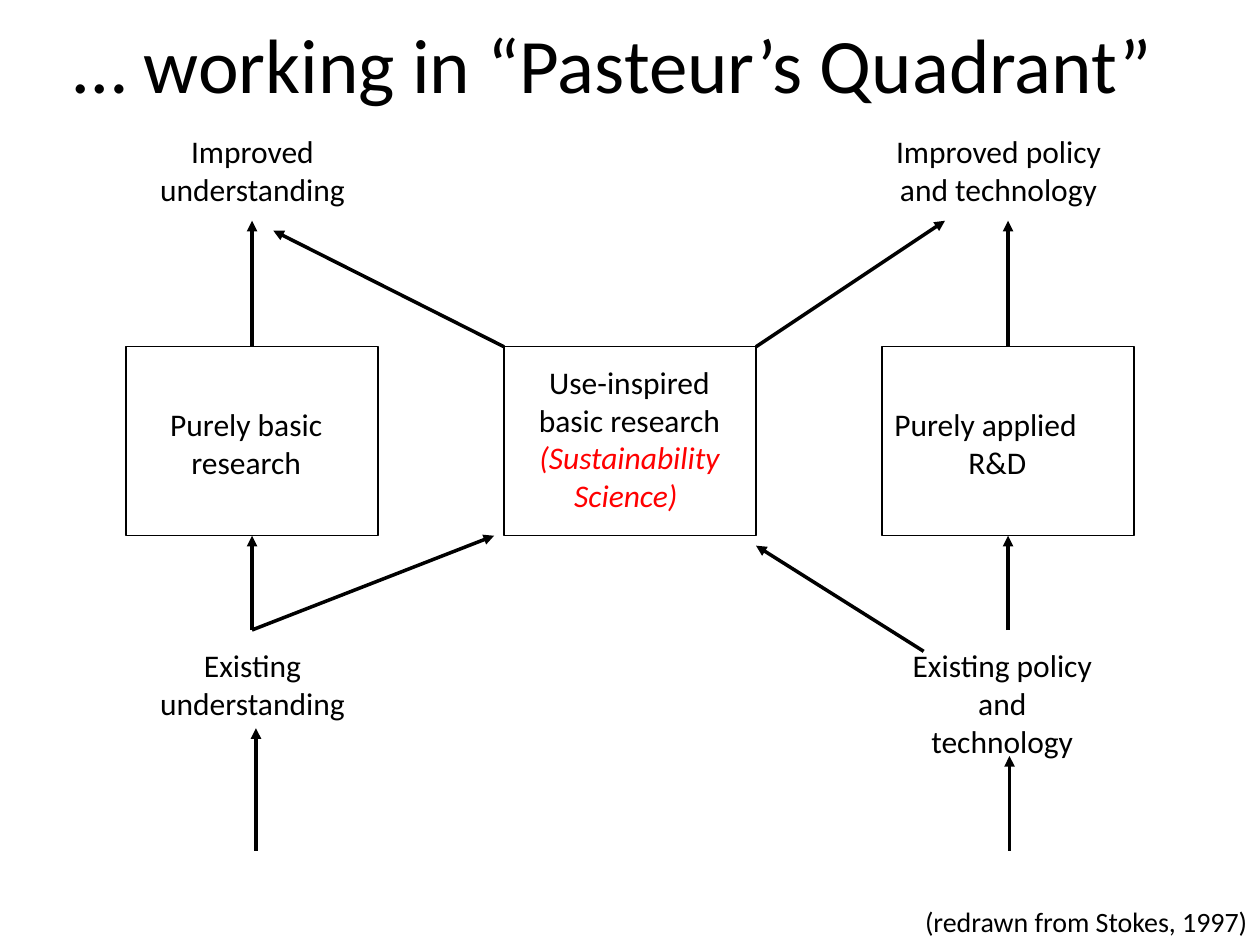
from dataclasses import dataclass
from typing import Optional

from lxml import etree
from pptx import Presentation
from pptx.dml.color import RGBColor
from pptx.enum.shapes import MSO_CONNECTOR, MSO_SHAPE
from pptx.enum.text import PP_ALIGN
from pptx.oxml.ns import qn
from pptx.util import Cm, Pt

LEFT, CENTER, RIGHT = PP_ALIGN.LEFT, PP_ALIGN.CENTER, PP_ALIGN.RIGHT
RECTANGLE, STRAIGHT = MSO_SHAPE.RECTANGLE, MSO_CONNECTOR.STRAIGHT
TOP_SITE, BOTTOM_SITE = 0, 2
BLANK_LAYOUT = 6
BLACK, RED = "000000", "FF0000"

BOX_WIDTH, BOX_HEIGHT, BOX_TOP = 5.08, 3.81, 6.99
BOX_BOTTOM = BOX_TOP + BOX_HEIGHT
BOX_LEFTS = {"basic": 2.54, "inspired": 10.16, "applied": 17.78}
BASIC_AXIS = BOX_LEFTS["basic"] + BOX_WIDTH / 2
APPLIED_AXIS = BOX_LEFTS["applied"] + BOX_WIDTH / 2
OUTCOME_Y, SOURCE_Y = 4.45, 12.7


@dataclass
class Line:
    text: str
    alignment: PP_ALIGN = CENTER
    color: str = BLACK
    italic: Optional[bool] = None


@dataclass
class Label:
    left: float
    top: float
    width: float
    height: float
    lines: list[Line]
    size: int = 18


@dataclass
class Arrow:
    start: tuple[float, float]
    end: tuple[float, float]
    from_box: Optional[str] = None
    to_box: Optional[str] = None


LABELS = [
    Label(0.2, 0.2, 24.33, 2.13, [Line("… working in “Pasteur’s Quadrant”")], 44),
    Label(2.74, 2.54, 4.7, 1.78, [Line("Improved understanding")]),
    Label(17.78, 2.54, 4.7, 1.78, [Line("Improved policy and technology")]),
    Label(2.74, 8.05, 4.45, 1.78, [Line("Purely basic research")]),
    Label(10.34, 7.19, 4.7, 3.33, [
        Line("Use-inspired basic research"),
        Line("(Sustainability Science) ", color=RED, italic=True),
    ]),
    Label(17.78, 8.05, 4.65, 1.78, [Line("Purely applied", LEFT), Line("R&D")]),
    Label(2.74, 12.9, 4.7, 1.78, [Line("Existing understanding")]),
    Label(17.98, 12.9, 4.45, 2.54, [Line("Existing policy and technology")]),
    Label(16.94, 18.11, 8.46, 0.94, [Line("(redrawn from Stokes, 1997)", RIGHT)], 16),
]

ARROWS = [
    Arrow((BASIC_AXIS, SOURCE_Y), (BASIC_AXIS, BOX_BOTTOM), to_box="basic"),
    Arrow((APPLIED_AXIS, SOURCE_Y), (APPLIED_AXIS, BOX_BOTTOM), to_box="applied"),
    Arrow((BASIC_AXIS, BOX_TOP), (BASIC_AXIS, OUTCOME_Y), from_box="basic"),
    Arrow((APPLIED_AXIS, BOX_TOP), (APPLIED_AXIS, OUTCOME_Y), from_box="applied"),
    Arrow((BASIC_AXIS, SOURCE_Y), (9.96, BOX_BOTTOM)),
    Arrow((BOX_LEFTS["inspired"] + BOX_WIDTH, BOX_TOP), (19.05, OUTCOME_Y)),
    Arrow((BOX_LEFTS["inspired"], BOX_TOP), (5.51, 4.65)),
    Arrow((18.62, 13.13), (15.24, 11)),
    Arrow((5.16, 17.15), (5.16, 14.68)),
    Arrow((20.35, 17.15), (20.35, 15.24)),
]


def hex_color(value: str) -> RGBColor:
    """Return the colour for a hex string."""
    return RGBColor.from_string(value)


def apply_format(target, values: dict) -> None:
    """Set each named attribute on the target."""
    for name, value in values.items():
        setattr(target, name, value)


def draw_box(slide, left: float):
    """Draw one outlined research box."""
    shape = slide.shapes.add_shape(
        RECTANGLE, Cm(left), Cm(BOX_TOP), Cm(BOX_WIDTH), Cm(BOX_HEIGHT)
    )
    shape.shadow.inherit = False
    shape.fill.background()
    shape.line.color.rgb = hex_color(BLACK)
    shape.line.width = Pt(0.75)
    return shape


def draw_label(slide, label: Label) -> None:
    """Draw a wrapped text box with one paragraph per line."""
    shape = slide.shapes.add_textbox(
        Cm(label.left), Cm(label.top), Cm(label.width), Cm(label.height)
    )
    frame = shape.text_frame
    frame.word_wrap = True
    for index, line in enumerate(label.lines):
        paragraph = frame.add_paragraph() if index else frame.paragraphs[0]
        paragraph.alignment = line.alignment
        run = paragraph.add_run()
        run.text = line.text
        apply_format(run.font, {
            "name": "Calibri", "size": Pt(label.size), "italic": line.italic,
        })
        run.font.color.rgb = hex_color(line.color)


def draw_arrow(slide, arrow: Arrow, boxes: dict) -> None:
    """Draw an arrow and join it to its boxes."""
    connector = slide.shapes.add_connector(
        STRAIGHT, *(Cm(value) for value in arrow.start + arrow.end)
    )
    if arrow.from_box:
        connector.begin_connect(boxes[arrow.from_box], TOP_SITE)
    if arrow.to_box:
        connector.end_connect(boxes[arrow.to_box], BOTTOM_SITE)
    connector.line.color.rgb = hex_color(BLACK)
    connector.line.width = Pt(2)
    properties = connector._element.spPr
    outline = properties.find(qn("a:ln"))
    etree.SubElement(outline, qn("a:tailEnd"), type="triangle")
    etree.SubElement(properties, qn("a:effectLst"))


def main() -> None:
    """Build and save the slide."""
    presentation = Presentation()
    apply_format(presentation, {"slide_width": Cm(25.4), "slide_height": Cm(19.05)})
    slide = presentation.slides.add_slide(presentation.slide_layouts[BLANK_LAYOUT])
    boxes = {name: draw_box(slide, left) for name, left in BOX_LEFTS.items()}
    for label in LABELS:
        draw_label(slide, label)
    for arrow in ARROWS:
        draw_arrow(slide, arrow, boxes)
    presentation.save("out.pptx")


if __name__ == "__main__":
    main()
